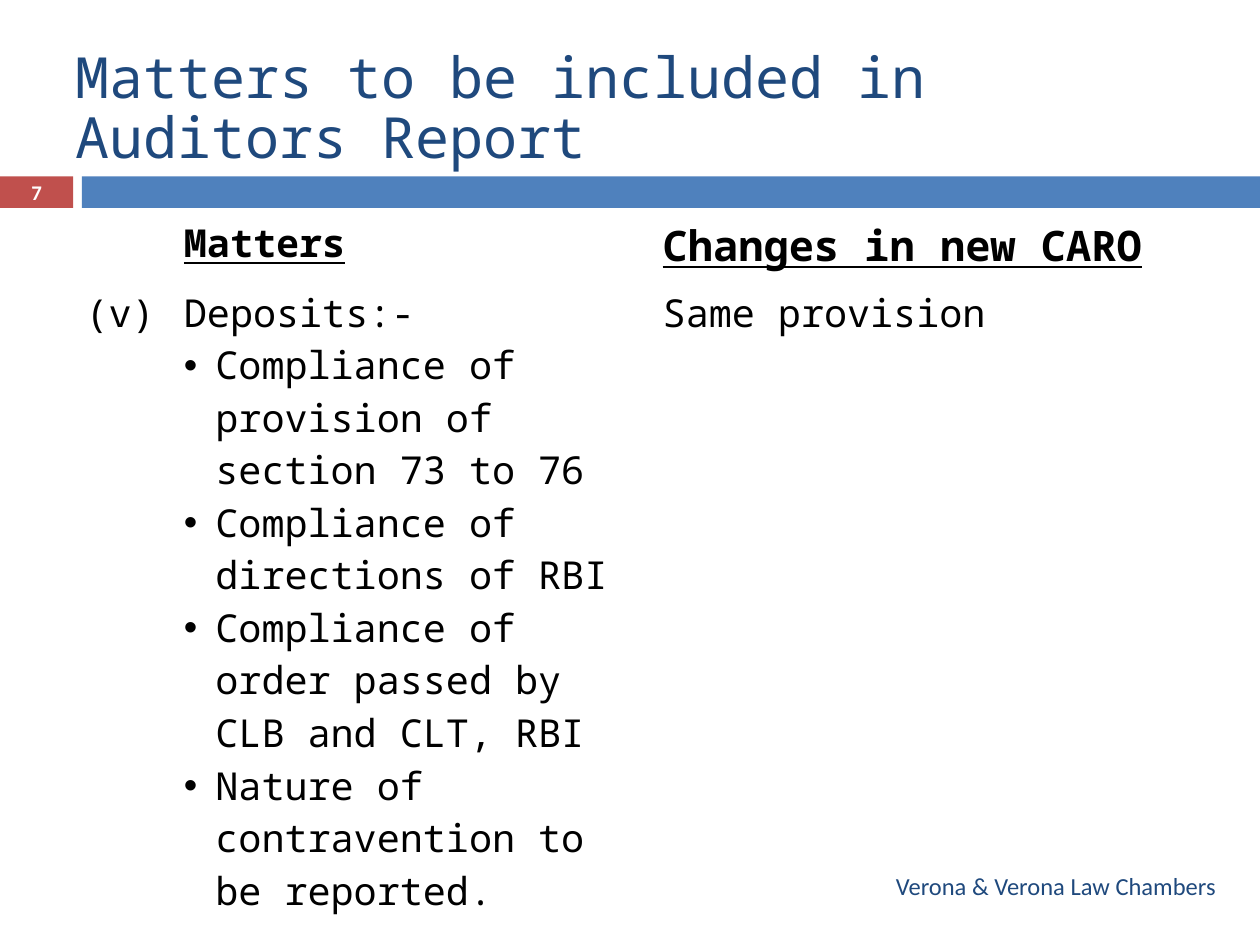
from dataclasses import dataclass

from lxml.etree import SubElement
from pptx import Presentation
from pptx.dml.color import RGBColor
from pptx.enum.shapes import MSO_SHAPE
from pptx.enum.text import MSO_ANCHOR, PP_ALIGN
from pptx.oxml.ns import qn
from pptx.util import Inches, Pt


@dataclass(frozen=True)
class Theme:
    navy: str = "1F497D"
    blue: str = "4F81BD"
    red: str = "C0504D"
    black: str = "000000"
    white: str = "FFFFFF"
    heading_font: str = "Noto Sans Mono"
    small_font: str = "Calibri"
    title_size: float = 32.4
    column_size: float = 24
    body_size: float = 22
    footer_size: float = 14
    number_size: float = 11.9


THEME = Theme()

TITLE = "Matters to be included in Auditors Report"
SLIDE_NUMBER = "7"
FOOTER = "Verona & Verona Law Chambers"
HEADINGS = [
    ("", THEME.body_size),
    ("Matters", THEME.body_size),
    ("Changes in new CARO", THEME.column_size),
]
CLAUSE = ["(v)", "Deposits:-", "Same provision"]
DEPOSIT_CHECKS = [
    "Compliance of provision of section 73 to 76",
    "Compliance of directions of RBI",
    "Compliance of order passed by CLB and CLT, RBI",
    "Nature of contravention to be reported.",
]

SLIDE_WIDTH, SLIDE_HEIGHT = 10, 7.5
BAND_TOP, BAND_HEIGHT = 1.4, 0.25
NUMBER_WIDTH, BAND_LEFT = 0.58, 0.65
COLUMN_WIDTHS = [0.78, 3.8, 4.67]
ROW_HEIGHTS = [0.55, 5.1]
BULLET_INDENT = 0.25


def style(paragraph, font, size, color, bold=False, underline=False):
    for run in paragraph.runs:
        run.font.name = font
        run.font.size = Pt(size)
        run.font.color.rgb = RGBColor.from_string(color)
        run.font.bold = bold
        run.font.underline = underline


def add_band(slide, left, width, color):
    band = slide.shapes.add_shape(
        MSO_SHAPE.RECTANGLE, Inches(left), Inches(BAND_TOP), Inches(width), Inches(BAND_HEIGHT)
    )
    band.shadow.inherit = False
    band.fill.solid()
    band.fill.fore_color.rgb = RGBColor.from_string(color)
    band.line.fill.background()


def add_label(slide, text, box, align, font, size, color, bold=False):
    label = slide.shapes.add_textbox(*map(Inches, box))
    frame = label.text_frame
    frame.word_wrap = True
    frame.vertical_anchor = MSO_ANCHOR.MIDDLE
    frame.text = text
    paragraph = frame.paragraphs[0]
    paragraph.alignment = align
    style(paragraph, font, size, color, bold)
    return paragraph


def add_bullet(paragraph):
    properties = paragraph._p.get_or_add_pPr()
    properties.set("marL", str(Inches(BULLET_INDENT)))
    properties.set("indent", str(-Inches(BULLET_INDENT)))
    SubElement(properties, qn("a:buFont")).set("typeface", "Arial")
    SubElement(properties, qn("a:buChar")).set("char", "•")


def add_matters_table(slide):
    table = slide.shapes.add_table(
        len(ROW_HEIGHTS), len(COLUMN_WIDTHS), Inches(0.58), Inches(1.67),
        Inches(sum(COLUMN_WIDTHS)), Inches(sum(ROW_HEIGHTS)),
    ).table
    table.first_row = table.horz_banding = False
    for column, width in zip(table.columns, COLUMN_WIDTHS):
        column.width = Inches(width)
    for row, height in zip(table.rows, ROW_HEIGHTS):
        row.height = Inches(height)
    for cell in table.iter_cells():
        cell.fill.background()

    for index, (heading, size) in enumerate(HEADINGS):
        cell = table.cell(0, index)
        cell.text_frame.text = heading
        style(cell.text_frame.paragraphs[0], THEME.heading_font, size, THEME.black, True, True)

    for index, entry in enumerate(CLAUSE):
        table.cell(1, index).text_frame.text = entry
    deposits = table.cell(1, 1).text_frame
    for check in DEPOSIT_CHECKS:
        paragraph = deposits.add_paragraph()
        paragraph.text = check
        add_bullet(paragraph)
    for index in range(len(CLAUSE)):
        for paragraph in table.cell(1, index).text_frame.paragraphs:
            style(paragraph, THEME.heading_font, THEME.body_size, THEME.black)


def main():
    presentation = Presentation()
    presentation.slide_width = Inches(SLIDE_WIDTH)
    presentation.slide_height = Inches(SLIDE_HEIGHT)
    slide = presentation.slides.add_slide(presentation.slide_layouts[6])

    add_band(slide, 0, NUMBER_WIDTH, THEME.red)
    add_band(slide, BAND_LEFT, SLIDE_WIDTH - BAND_LEFT, THEME.blue)
    title = add_label(slide, TITLE, (0.5, 0.42, 9, 0.92), PP_ALIGN.LEFT,
                      THEME.heading_font, THEME.title_size, THEME.navy)
    title.line_spacing = 0.88
    add_label(slide, SLIDE_NUMBER, (0, 1.39, NUMBER_WIDTH, 0.27), PP_ALIGN.CENTER,
              THEME.small_font, THEME.number_size, THEME.white, bold=True)
    add_label(slide, FOOTER, (0.67, 6.83, 9.08, 0.4), PP_ALIGN.RIGHT,
              THEME.small_font, THEME.footer_size, THEME.navy)
    add_matters_table(slide)

    presentation.save("out.pptx")


if __name__ == "__main__":
    main()
